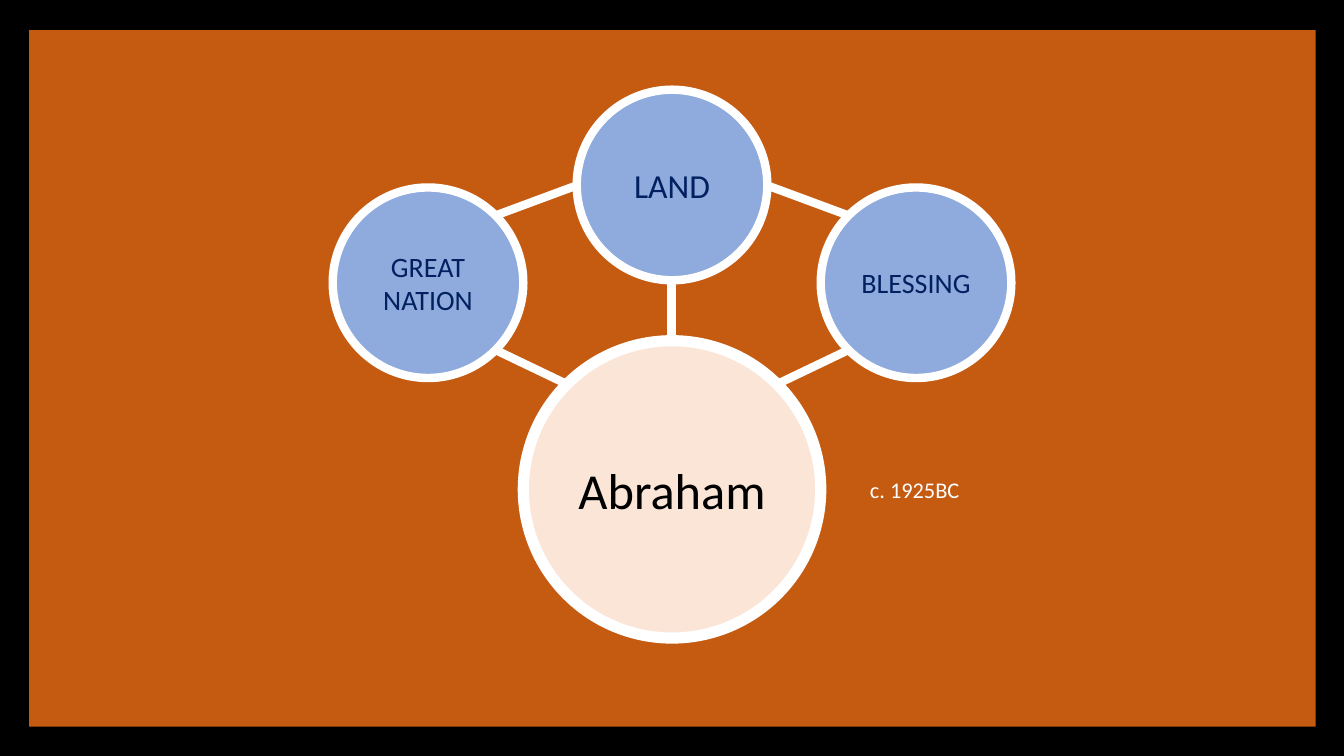
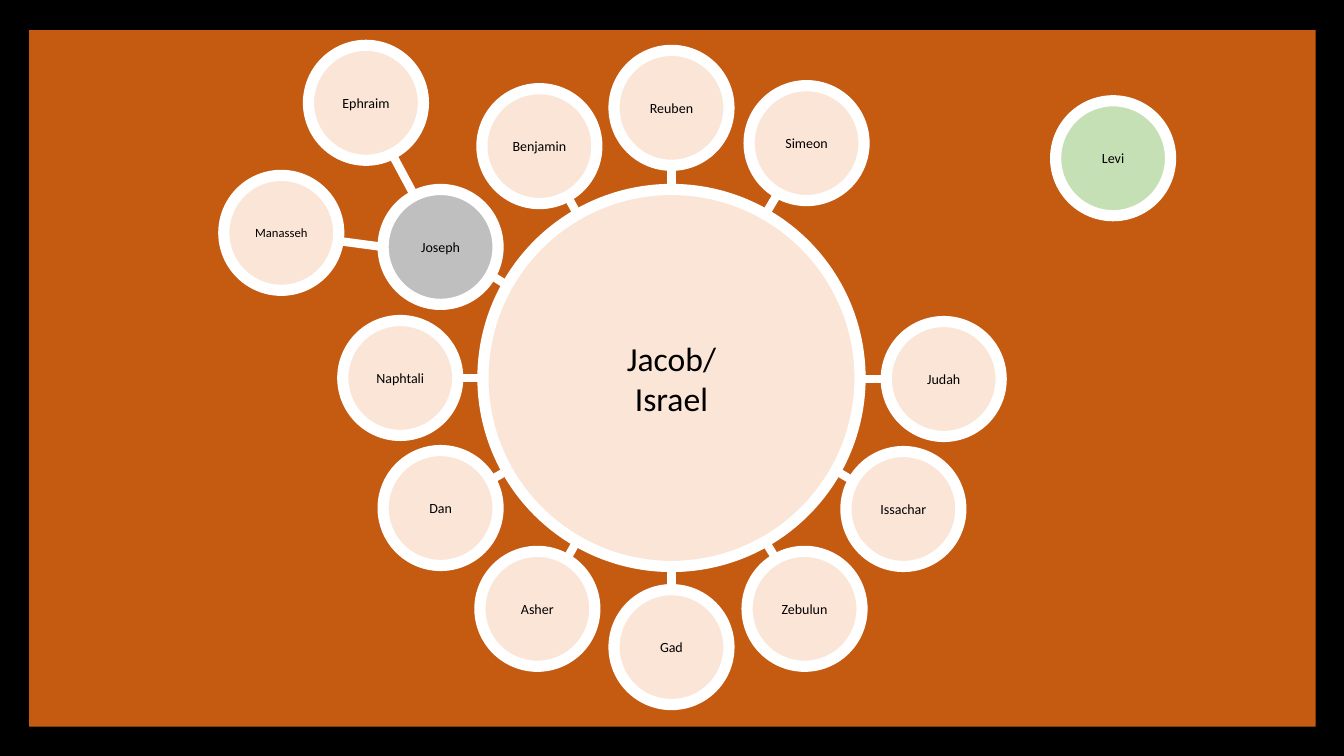
import dataclasses
import math
import typing

import lxml.etree
import pptx
import pptx.dml.color
import pptx.enum.shapes
import pptx.enum.text
import pptx.oxml.ns
import pptx.slide
import pptx.util

SCALE = 9144
FONT = "Calibri"
HUES = {
    "back": "000000",
    "panel": "C55A11",
    "edge": "FFFFFF",
    "text": "000000",
    "navy": "002060",
    "peach": "FBE5D6",
    "blue": "8FAADC",
    "green": "C5E0B4",
    "gray": "BFBFBF",
}
KIND = pptx.enum.shapes.MSO_SHAPE
ALIGN = pptx.enum.text.PP_ALIGN
MID = pptx.enum.text.MSO_ANCHOR.MIDDLE
FIT = pptx.enum.text.MSO_AUTO_SIZE.SHAPE_TO_FIT_TEXT


@dataclasses.dataclass(frozen=True)
class Disc:
    text: str
    left: int
    top: int
    span: int = 114
    size: int = 10
    fill: str = "peach"
    ink: str = "text"
    line: int = 8
    pad: int = 10

    def mid(self) -> tuple[float, float]:
        return self.left + self.span / 2, self.top + self.span / 2

    def spot(self, angle: float) -> tuple[int, int]:
        x, y = self.mid()
        turn = math.radians(angle)
        reach = self.span / 2
        return round(x + reach * math.cos(turn)), round(y + reach * math.sin(turn))

    def aim(self, goal: "Disc") -> float:
        (x, y), (u, v) = self.mid(), goal.mid()
        return math.degrees(math.atan2(v - y, u - x))


@dataclasses.dataclass(frozen=True)
class Link:
    start: str
    stop: str
    leave: float | None = None
    reach: float | None = None


PACT = {"span": 189, "size": 20, "fill": "blue", "ink": "navy", "line": 6}
FIRST = [
    Disc("Abraham", 519, 338, span=295, size=36, pad=0),
    Disc("GREAT\nNATION", 330, 186, **PACT),
    Disc("LAND", 572, 89, **{**PACT, "size": 24}),
    Disc("BLESSING", 814, 186, **PACT),
]
TIES = [
    Link("GREAT\nNATION", "Abraham", 45, 225),
    Link("LAND", "Abraham", 90, 270),
    Link("BLESSING", "Abraham", 135, 315),
    Link("LAND", "GREAT\nNATION", 180, 315),
    Link("BLESSING", "LAND", 225, 0),
]

HUB = Disc("Jacob/\vIsrael", 479, 188, span=374, size=24, pad=0)
SONS = [
    Disc("Reuben", 609, 50),
    Disc("Simeon", 743, 85),
    Disc("Judah", 879, 319),
    Disc("Issachar", 839, 448),
    Disc("Zebulun", 741, 547),
    Disc("Gad", 609, 585),
    Disc("Asher", 476, 547),
    Disc("Dan", 380, 447),
    Disc("Naphtali", 340, 318),
    Disc("Joseph", 380, 188, fill="gray"),
    Disc("Benjamin", 478, 88),
]
HEIRS = [
    Disc("Manasseh", 222, 174, size=9),
    Disc("Ephraim", 306, 45),
]
LEVI = Disc("Levi", 1047, 100, fill="green")
KIN = [Link(son.text, HUB.text) for son in SONS] + [
    Link("Manasseh", "Joseph", 8, 180),
    Link("Ephraim", "Joseph"),
]


def px(size: float) -> int:
    return round(size * SCALE)


def hue(name: str) -> pptx.dml.color.RGBColor:
    return pptx.dml.color.RGBColor.from_string(HUES[name])


def put(item: typing.Any, form: dict[str, typing.Any]) -> None:
    for name, value in form.items():
        setattr(item, name, value)


def paint(fill: typing.Any, name: str) -> None:
    fill.solid()
    fill.fore_color.rgb = hue(name)


def write(shape: typing.Any, text: str, size: int, ink: str,
          align: typing.Any, form: dict[str, typing.Any]) -> None:
    frame = shape.text_frame
    frame.text = text
    put(frame, {"word_wrap": True, "vertical_anchor": MID, **form})
    for para in frame.paragraphs:
        para.alignment = align
        for run in para.runs:
            put(run.font, {"name": FONT, "size": pptx.util.Pt(size)})
            run.font.color.rgb = hue(ink)


def stroke(line: typing.Any, width: int) -> None:
    paint(line.fill, "edge")
    line.width = pptx.util.Pt(width)


def draw(slide: pptx.slide.Slide, disc: Disc) -> None:
    shape = slide.shapes.add_shape(
        KIND.OVAL, px(disc.left), px(disc.top), px(disc.span), px(disc.span))
    shape.shadow.inherit = False
    paint(shape.fill, disc.fill)
    stroke(shape.line, disc.line)
    pad = px(disc.pad)
    write(shape, disc.text, disc.size, disc.ink, ALIGN.CENTER,
          {"margin_left": pad, "margin_right": pad})


def join(slide: pptx.slide.Slide, head: Disc, tail: Disc, link: Link) -> None:
    leave = head.aim(tail) if link.leave is None else link.leave
    reach = tail.aim(head) if link.reach is None else link.reach
    ends = [px(part) for part in head.spot(leave) + tail.spot(reach)]
    line = slide.shapes.add_connector(
        pptx.enum.shapes.MSO_CONNECTOR.STRAIGHT, *ends)
    stroke(line.line, 6)
    lxml.etree.SubElement(
        line._element.spPr, pptx.oxml.ns.qn("a:effectLst"))


def chart(deck: typing.Any, discs: list[Disc], links: list[Link]) -> pptx.slide.Slide:
    slide = deck.slides.add_slide(deck.slide_layouts[6])
    panel = slide.shapes.add_shape(
        KIND.RECTANGLE, px(29), px(30), px(1276), px(691))
    panel.shadow.inherit = False
    paint(panel.fill, "panel")
    panel.line.fill.background()
    for disc in discs:
        draw(slide, disc)
    names = {disc.text: disc for disc in discs}
    for link in links:
        join(slide, names[link.start], names[link.stop], link)
    return slide


def main() -> None:
    deck = pptx.Presentation()
    put(deck, {"slide_width": px(1333), "slide_height": px(750)})
    paint(deck.slide_master.background.fill, "back")
    slide = chart(deck, FIRST, TIES)
    date = slide.shapes.add_textbox(px(853), px(467), px(276), px(37))
    write(date, "c. 1925BC", 16, "edge", ALIGN.LEFT, {"auto_size": FIT})
    chart(deck, [HUB, *SONS, LEVI, *HEIRS], KIN)
    deck.save("out.pptx")


if __name__ == "__main__":
    main()
